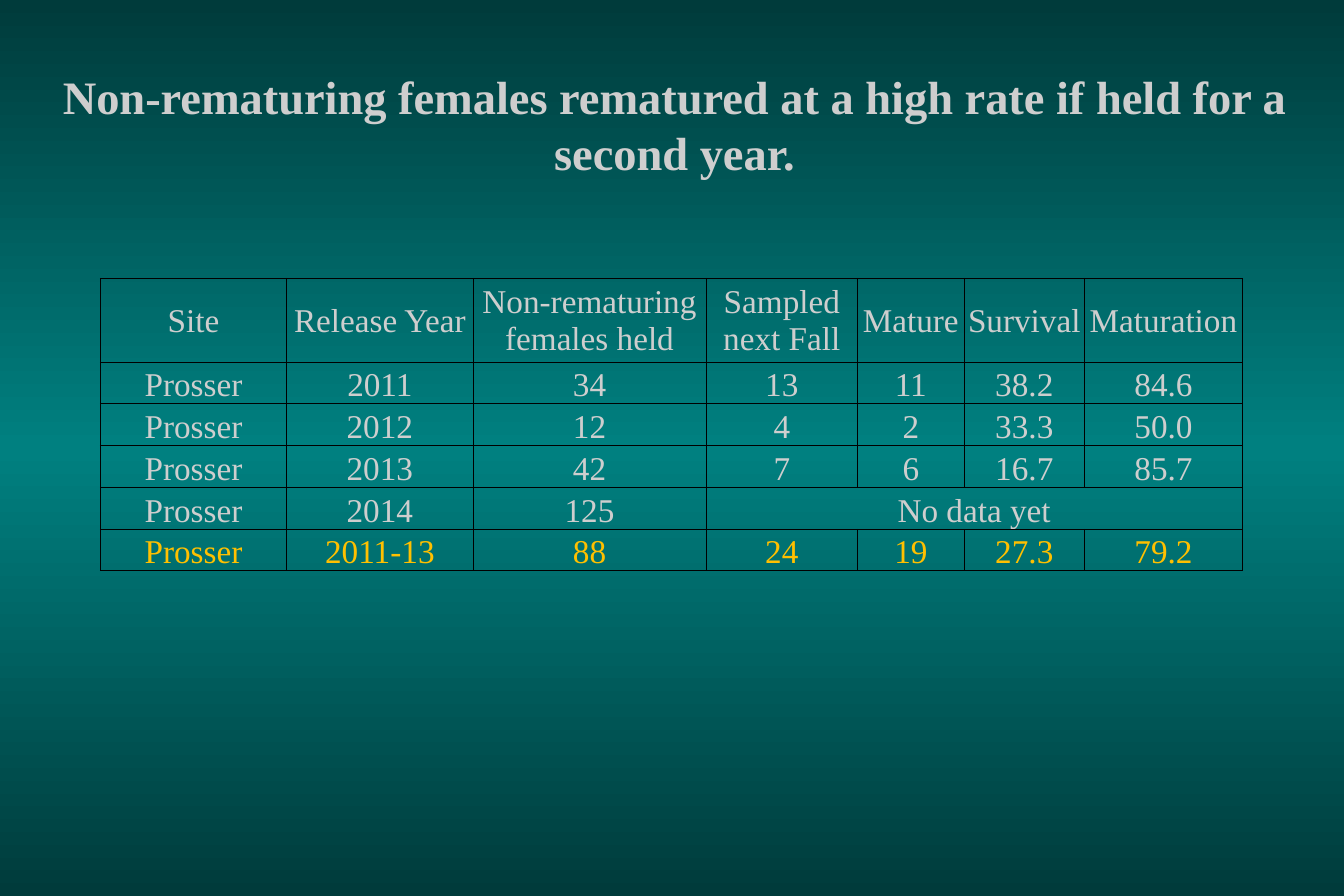
from copy import deepcopy

from lxml import etree
from pptx import Presentation
from pptx.dml.color import RGBColor
from pptx.enum.text import MSO_ANCHOR, PP_ALIGN
from pptx.oxml.ns import qn
from pptx.util import Pt

MIDDLE, BOTTOM = MSO_ANCHOR.MIDDLE, MSO_ANCHOR.BOTTOM
CENTER = PP_ALIGN.CENTER

# Content
TITLE = "Non-rematuring females rematured at a high rate if held for a second year."
ROWS = [
    ("Site", "Release Year", "Non-rematuring females held", "Sampled next Fall",
     "Mature", "Survival", "Maturation"),
    ("Prosser", "2011", "34", "13", "11", "38.2", "84.6"),
    ("Prosser", "2012", "12", "4", "2", "33.3", "50.0"),
    ("Prosser", "2013", "42", "7", "6", "16.7", "85.7"),
    ("Prosser", "2014", "125", "No data yet"),
    ("Prosser", "2011-13", "88", "24", "19", "27.3", "79.2"),
]

# Look and layout, in px at 100 to the inch
COLORS = {"edge": "003B3B", "center": "008080", "text": "CECECE",
          "total": "FFC000", "border": "000000"}
FONT = "Times New Roman"
PX = 9144
SLIDE_SIZE = (1125, 750)
TITLE_BOX = (4, 40, 1121, 127)
TABLE_LEFT, TABLE_TOP = 84, 233
COLUMN_WIDTHS = [156, 156, 195, 127, 89, 101, 132]
ROW_HEIGHTS = [70, 35, 35, 35, 35, 34]


def px(*lengths):
    return [length * PX for length in lengths]


def write(frame, text, size, color, bold=False):
    para = frame.paragraphs[0]
    para.alignment = CENTER
    span = para.add_run()
    span.text = text
    span.font.name = FONT
    span.font.size = Pt(size)
    span.font.bold = bold
    span.font.color.rgb = RGBColor.from_string(COLORS[color])


def add_borders(cell):
    properties = cell._tc.get_or_add_tcPr()
    for position, side in enumerate(("lnL", "lnR", "lnT", "lnB")):
        line = etree.Element(qn(f"a:{side}"), w=str(Pt(0.5)))
        fill = etree.SubElement(line, qn("a:solidFill"))
        etree.SubElement(fill, qn("a:srgbClr"), val=COLORS["border"])
        properties.insert(position, line)


deck = Presentation()
deck.slide_width, deck.slide_height = px(*SLIDE_SIZE)
page = deck.slides.add_slide(deck.slide_layouts[6])

# Background: dark edges, lighter center
backdrop = page.background.fill
backdrop.gradient()
backdrop.gradient_angle = 270
stop_list = next(page.element.iter(qn("a:gsLst")))
stop_list.append(deepcopy(stop_list[0]))
for stop, place, color in zip(backdrop.gradient_stops, (0, 0.5, 1),
                              ("edge", "center", "edge")):
    stop.position = place
    stop.color.rgb = RGBColor.from_string(COLORS[color])

# Title
title = page.shapes.add_textbox(*px(*TITLE_BOX)).text_frame
title.word_wrap = True
title.vertical_anchor = MIDDLE
write(title, TITLE, 28, "text", bold=True)

# Table
table = page.shapes.add_table(
    len(ROWS), len(COLUMN_WIDTHS),
    *px(TABLE_LEFT, TABLE_TOP, sum(COLUMN_WIDTHS), sum(ROW_HEIGHTS))).table
table.first_row = table.horz_banding = False
for column, width in zip(table.columns, px(*COLUMN_WIDTHS)):
    column.width = width
for row, height in zip(table.rows, px(*ROW_HEIGHTS)):
    row.height = height

for cell in table.iter_cells():
    cell.fill.background()
    cell.margin_left, cell.margin_top, cell.margin_right, cell.margin_bottom = px(1, 1, 1, 0)
    add_borders(cell)

last_row, last_column = len(ROWS) - 1, len(COLUMN_WIDTHS) - 1
for row_index, values in enumerate(ROWS):
    color = "total" if row_index == last_row else "text"
    for column_index, value in enumerate(values):
        cell = table.cell(row_index, column_index)
        cell.vertical_anchor = BOTTOM if row_index else MIDDLE
        write(cell.text_frame, value, 20, color)
    # A short row stretches its final value to the right edge
    if column_index < last_column:
        cell.merge(table.cell(row_index, last_column))

deck.save("out.pptx")
